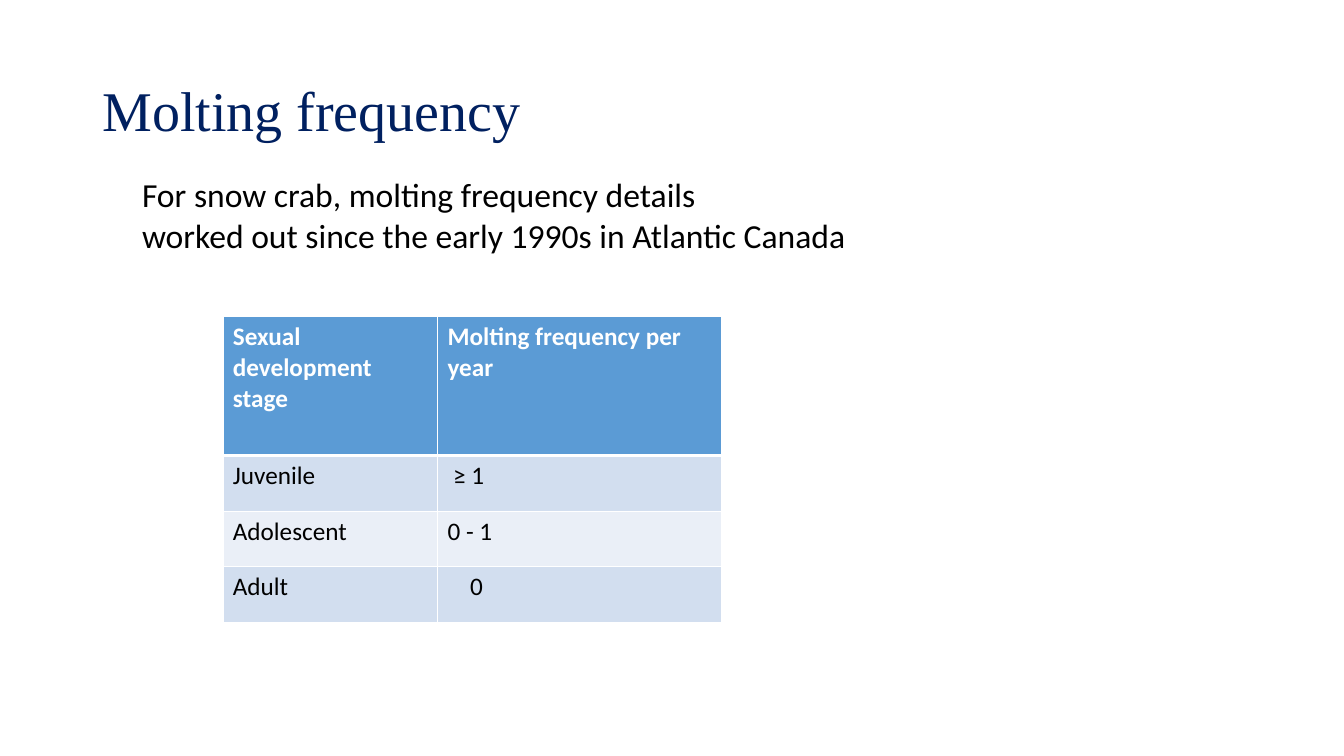
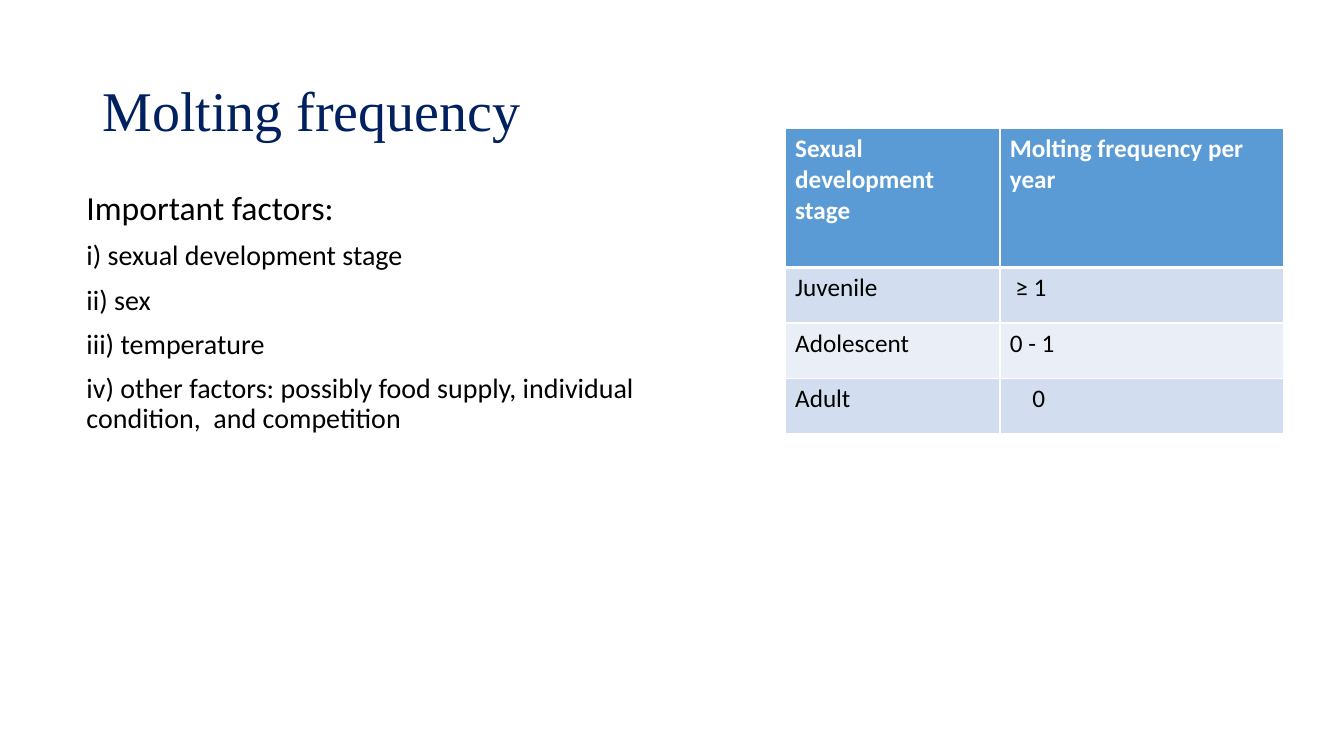
"""Build two slides on the molting frequency of snow crab."""
from dataclasses import dataclass

from lxml.etree import SubElement
from pptx import Presentation
from pptx.dml.color import RGBColor
from pptx.enum.text import MSO_ANCHOR, MSO_AUTO_SIZE, PP_ALIGN
from pptx.oxml.ns import qn
from pptx.slide import Slide
from pptx.table import _Cell
from pptx.util import Cm, Pt


@dataclass(frozen=True)
class Theme:
    """Colours, fonts and type sizes shared by the slides."""
    navy: RGBColor = RGBColor(0x00, 0x20, 0x60)
    black: RGBColor = RGBColor(0x00, 0x00, 0x00)
    white: RGBColor = RGBColor(0xFF, 0xFF, 0xFF)
    header: RGBColor = RGBColor(0x5B, 0x9B, 0xD5)
    band_dark: RGBColor = RGBColor(0xD2, 0xDE, 0xEF)
    band_light: RGBColor = RGBColor(0xEA, 0xEF, 0xF7)
    title_font: str = "Times New Roman"
    body_font: str = "Calibri"
    title_size: Pt = Pt(40)
    lead_size: Pt = Pt(24)
    item_size: Pt = Pt(20)
    table_size: Pt = Pt(18)
    thin_rule: Pt = Pt(1)
    thick_rule: Pt = Pt(3)


@dataclass(frozen=True)
class Box:
    """Place and size of a block of text."""
    left: Cm
    top: Cm
    width: Cm
    height: Cm


@dataclass(frozen=True)
class Line:
    """One paragraph and its type size."""
    text: str
    size: Pt


@dataclass(frozen=True)
class Stage:
    """A table row: development stage, frequency and frequency indent."""
    name: str
    frequency: str
    indent: Cm = Cm(0)


THEME = Theme()
TITLE = "Molting frequency"
TITLE_BOX = Box(Cm(2.33), Cm(1.02), Cm(29.21), Cm(3.68))
COLUMN_WIDTHS = (Cm(5.41), Cm(7.16))
HEADER_HEIGHT = Cm(3.5)
STAGE_HEIGHT = Cm(1.4)
CELL_MARGIN = Cm(0.25)
STAGES = (
    Stage("Sexual development stage", "Molting frequency per year"),
    Stage("Juvenile", "≥ 1", Cm(0.14)),
    Stage("Adolescent", "0 - 1"),
    Stage("Adult", "0", Cm(0.57)),
)
INTRO = (
    Line("For snow crab, molting frequency details", THEME.lead_size),
    Line("worked out since the early 1990s in Atlantic Canada", THEME.lead_size),
)
FACTORS = (
    Line("Important factors:", THEME.lead_size),
    Line("i) sexual development stage", THEME.item_size),
    Line("ii) sex", THEME.item_size),
    Line("iii) temperature", THEME.item_size),
    Line("iv) other factors: possibly food supply, individual condition,  and competition",
         THEME.item_size),
)


def add_titled_slide(deck: Presentation) -> Slide:
    """Add a title-only slide with the shared title."""
    slide = deck.slides.add_slide(deck.slide_layouts[5])
    title = slide.shapes.title
    title.left, title.top = TITLE_BOX.left, TITLE_BOX.top
    title.width, title.height = TITLE_BOX.width, TITLE_BOX.height
    frame = title.text_frame
    frame.text = TITLE
    frame.auto_size = MSO_AUTO_SIZE.NONE
    frame.vertical_anchor = MSO_ANCHOR.MIDDLE
    heading = frame.paragraphs[0]
    heading.alignment = PP_ALIGN.LEFT
    heading.line_spacing = 0.9
    heading.font.name = THEME.title_font
    heading.font.size = THEME.title_size
    heading.font.color.rgb = THEME.navy
    return slide


def add_lines(slide: Slide, box: Box, lines: tuple[Line, ...],
              spacing: float = 1.0, before: Pt = Pt(0)) -> None:
    """Add a wrapped text box with one paragraph per line."""
    frame = slide.shapes.add_textbox(box.left, box.top, box.width, box.height).text_frame
    frame.word_wrap = True
    for index, line in enumerate(lines):
        paragraph = frame.add_paragraph() if index else frame.paragraphs[0]
        paragraph.text = line.text
        paragraph.line_spacing = spacing
        paragraph.space_before = before
        paragraph.font.name = THEME.body_font
        paragraph.font.size = line.size
        paragraph.font.color.rgb = THEME.black


def draw_borders(cell: _Cell, top: Pt, bottom: Pt) -> None:
    """Draw white rules on the four sides of a cell."""
    properties = cell._tc.get_or_add_tcPr()
    thin = THEME.thin_rule
    for side, width in (("L", thin), ("R", thin), ("T", top), ("B", bottom)):
        rule = SubElement(properties, qn(f"a:ln{side}"), w=str(width))
        fill = SubElement(rule, qn("a:solidFill"))
        SubElement(fill, qn("a:srgbClr"), val=str(THEME.white))


def format_cell(cell: _Cell, row: int, text: str, indent: Cm) -> None:
    """Fill a cell with its text and the style of its row."""
    is_header = row == 0
    cell.text = text
    cell.margin_left = CELL_MARGIN + indent
    font = cell.text_frame.paragraphs[0].font
    font.name = THEME.body_font
    font.size = THEME.table_size
    font.bold = is_header
    font.color.rgb = THEME.white if is_header else THEME.black
    draw_borders(cell,
                 top=THEME.thick_rule if row == 1 else THEME.thin_rule,
                 bottom=THEME.thick_rule if is_header else THEME.thin_rule)
    band = THEME.band_dark if row % 2 else THEME.band_light
    cell.fill.solid()
    cell.fill.fore_color.rgb = THEME.header if is_header else band


def add_frequency_table(slide: Slide, left: Cm, top: Cm) -> None:
    """Add the table of molting frequency by development stage."""
    height = HEADER_HEIGHT + STAGE_HEIGHT * (len(STAGES) - 1)
    table = slide.shapes.add_table(len(STAGES), len(COLUMN_WIDTHS), left, top,
                                   sum(COLUMN_WIDTHS), height).table
    for column, width in zip(table.columns, COLUMN_WIDTHS):
        column.width = width
    for row, stage in enumerate(STAGES):
        table.rows[row].height = STAGE_HEIGHT if row else HEADER_HEIGHT
        format_cell(table.cell(row, 0), row, stage.name, Cm(0))
        format_cell(table.cell(row, 1), row, stage.frequency, stage.indent)


def main() -> None:
    """Build and save the presentation."""
    deck = Presentation()
    deck.slide_width, deck.slide_height = Cm(33.87), Cm(19.05)

    overview = add_titled_slide(deck)
    add_frequency_table(overview, Cm(5.62), Cm(7.98))
    add_lines(overview, Box(Cm(3.33), Cm(4.27), Cm(21.06), Cm(2.31)), INTRO)

    factors = add_titled_slide(deck)
    add_frequency_table(factors, Cm(19.79), Cm(3.24))
    add_lines(factors, Box(Cm(1.93), Cm(4.7), Cm(16.59), Cm(7.06)), FACTORS,
              spacing=0.9, before=Pt(10))

    deck.save("out.pptx")


if __name__ == "__main__":
    main()
